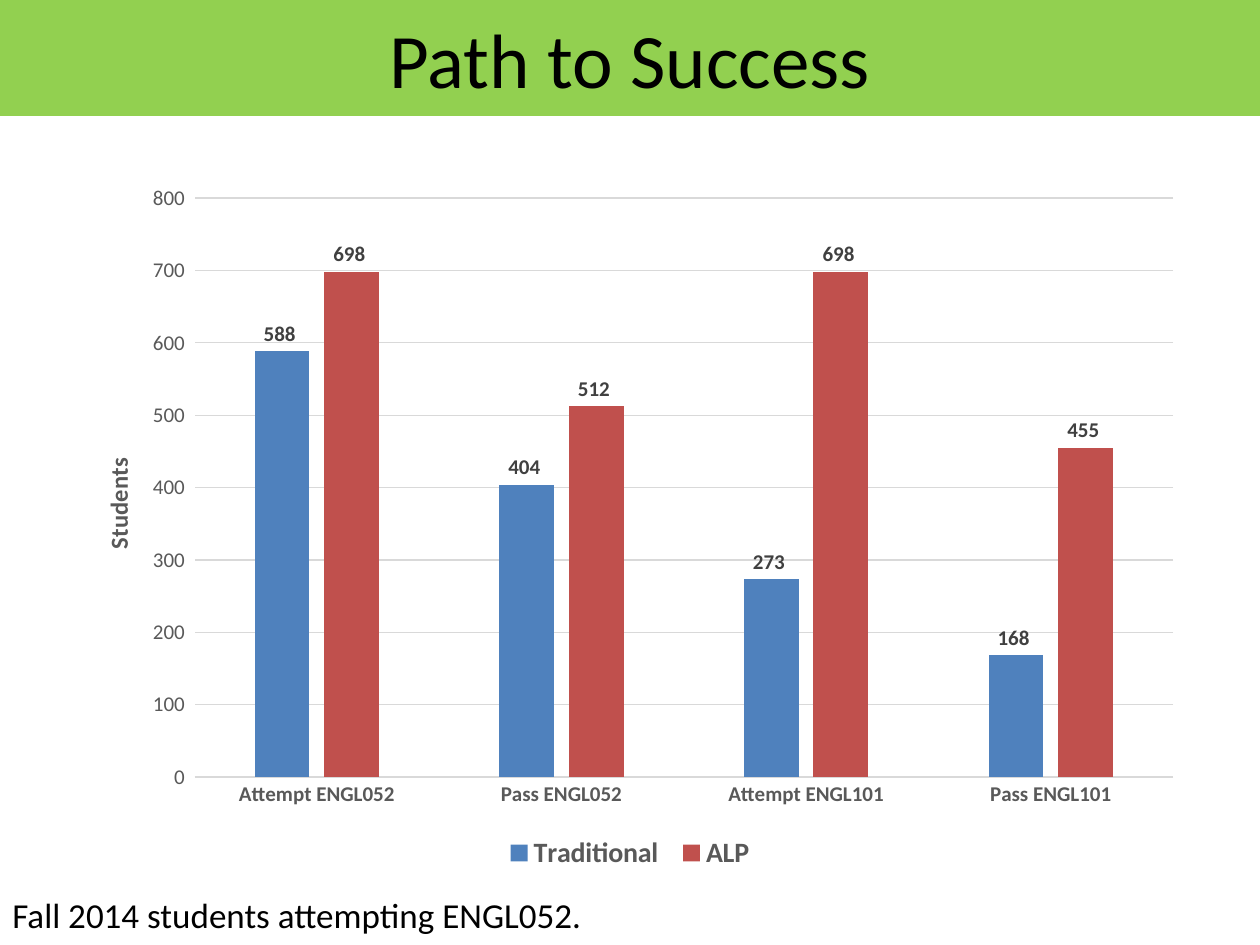
import pptx
import pptx.chart.data
import pptx.dml.color
import pptx.enum.chart
import pptx.enum.text
import pptx.oxml
import pptx.oxml.ns
import pptx.util
from pptx.util import Inches, Pt

RGBColor = pptx.dml.color.RGBColor
GREEN = RGBColor(0x92, 0xD0, 0x50)
BLUE = RGBColor(0x4F, 0x81, 0xBD)
RED = RGBColor(0xC0, 0x50, 0x4D)
BLACK = RGBColor(0, 0, 0)
DARK_GRAY = RGBColor(0x40, 0x40, 0x40)
GRAY = RGBColor(0x59, 0x59, 0x59)
LIGHT_GRAY = RGBColor(0xD9, 0xD9, 0xD9)

FONT = "Calibri"
COUNT_FORMAT = r"#,##0_);[Red]\(#,##0\)"
STAGES = ["Attempt ENGL052", "Pass ENGL052", "Attempt ENGL101", "Pass ENGL101"]
COHORTS = [
    ("Traditional ", [588, 404, 273, 168], BLUE),
    ("ALP", [698, 512, 698, 455], RED),
]


def style_font(font, size, color, bold=False):
    font.name = FONT
    font.size = Pt(size)
    font.color.rgb = color
    font.bold = bold


def style_line(line, color):
    line.color.rgb = color
    line.width = Pt(0.75)


def set_layout(parent, index, **settings):
    """Give a chart part a manual layout, in fractions of the chart."""
    for old_layout in parent.findall(pptx.oxml.ns.qn("c:layout")):
        parent.remove(old_layout)
    entries = "".join(f'<c:{key} val="{value}"/>' for key, value in settings.items())
    parent.insert(index, pptx.oxml.parse_xml(
        f'<c:layout {pptx.oxml.ns.nsdecls("c")}>'
        f"<c:manualLayout>{entries}</c:manualLayout></c:layout>"))


def add_title(slide, text):
    title = slide.shapes.title
    title.left, title.top = Inches(0), Inches(0)
    title.width, title.height = Inches(10), Inches(0.92)
    title.fill.solid()
    title.fill.fore_color.rgb = GREEN
    frame = title.text_frame
    frame.text = text
    frame.vertical_anchor = pptx.enum.text.MSO_ANCHOR.MIDDLE
    frame.paragraphs[0].alignment = pptx.enum.text.PP_ALIGN.CENTER
    style_font(frame.paragraphs[0].runs[0].font, 44, BLACK)


def style_axes(chart):
    stages = chart.category_axis
    stages.major_tick_mark = pptx.enum.chart.XL_TICK_MARK.NONE
    style_font(stages.tick_labels.font, 12, GRAY, bold=True)
    style_line(stages.format.line, LIGHT_GRAY)

    students = chart.value_axis
    students.minimum_scale, students.maximum_scale = 0, 800
    students.major_unit = 100
    students.major_tick_mark = pptx.enum.chart.XL_TICK_MARK.NONE
    style_font(students.tick_labels.font, 12, GRAY)
    students.tick_labels.number_format = COUNT_FORMAT
    students.tick_labels.number_format_is_linked = False
    students.format.line.fill.background()
    style_line(students.major_gridlines.format.line, LIGHT_GRAY)

    heading = students.axis_title
    heading.text_frame.text = "Students"
    style_font(heading.text_frame.paragraphs[0].runs[0].font, 14, GRAY, bold=True)
    set_layout(heading._element, 1, xMode="edge", yMode="edge", x=0.03, y=0.4)


def style_series(series, color):
    series.format.fill.solid()
    series.format.fill.fore_color.rgb = color
    labels = series.data_labels
    labels.show_value = True
    labels.position = pptx.enum.chart.XL_LABEL_POSITION.OUTSIDE_END
    labels.number_format = COUNT_FORMAT
    labels.number_format_is_linked = False
    style_font(labels.font, 12, DARK_GRAY, bold=True)


def add_student_chart(slide):
    data = pptx.chart.data.CategoryChartData(number_format=COUNT_FORMAT)
    data.categories = STAGES
    for name, counts, _ in COHORTS:
        data.add_series(name, counts)
    chart = slide.shapes.add_chart(
        pptx.enum.chart.XL_CHART_TYPE.COLUMN_CLUSTERED,
        Inches(0.5), Inches(1.36), Inches(9), Inches(5.59), data).chart
    chart.has_title = False
    style_font(chart.font, 10, BLACK)

    chart.has_legend = True
    chart.legend.position = pptx.enum.chart.XL_LEGEND_POSITION.BOTTOM
    chart.legend.include_in_layout = False
    style_font(chart.legend.font, 16, GRAY, bold=True)

    plot = chart.plots[0]
    plot.gap_width, plot.overlap = 219, -27
    plot.vary_by_categories = False
    for series, (_, _, color) in zip(plot.series, COHORTS):
        style_series(series, color)
    style_axes(chart)
    plot_area = chart._chartSpace.chart.plotArea
    set_layout(plot_area, 0, layoutTarget="inner", xMode="edge", yMode="edge",
               x=0.116, y=0.038, w=0.863, h=0.822)


def add_caption(slide, text):
    caption = slide.shapes.add_textbox(Inches(0), Inches(7.04), Inches(10), Inches(0.44))
    frame = caption.text_frame
    frame.word_wrap = True
    frame.auto_size = pptx.enum.text.MSO_AUTO_SIZE.SHAPE_TO_FIT_TEXT
    frame.text = text
    style_font(frame.paragraphs[0].runs[0].font, 20, BLACK)


def main():
    deck = pptx.Presentation()
    deck.slide_width, deck.slide_height = Inches(10), Inches(7.5)
    slide = deck.slides.add_slide(deck.slide_layouts.get_by_name("Title Only"))
    add_title(slide, "Path to Success")
    add_student_chart(slide)
    add_caption(slide, "Fall 2014 students attempting ENGL052.")
    deck.save("out.pptx")


if __name__ == "__main__":
    main()
